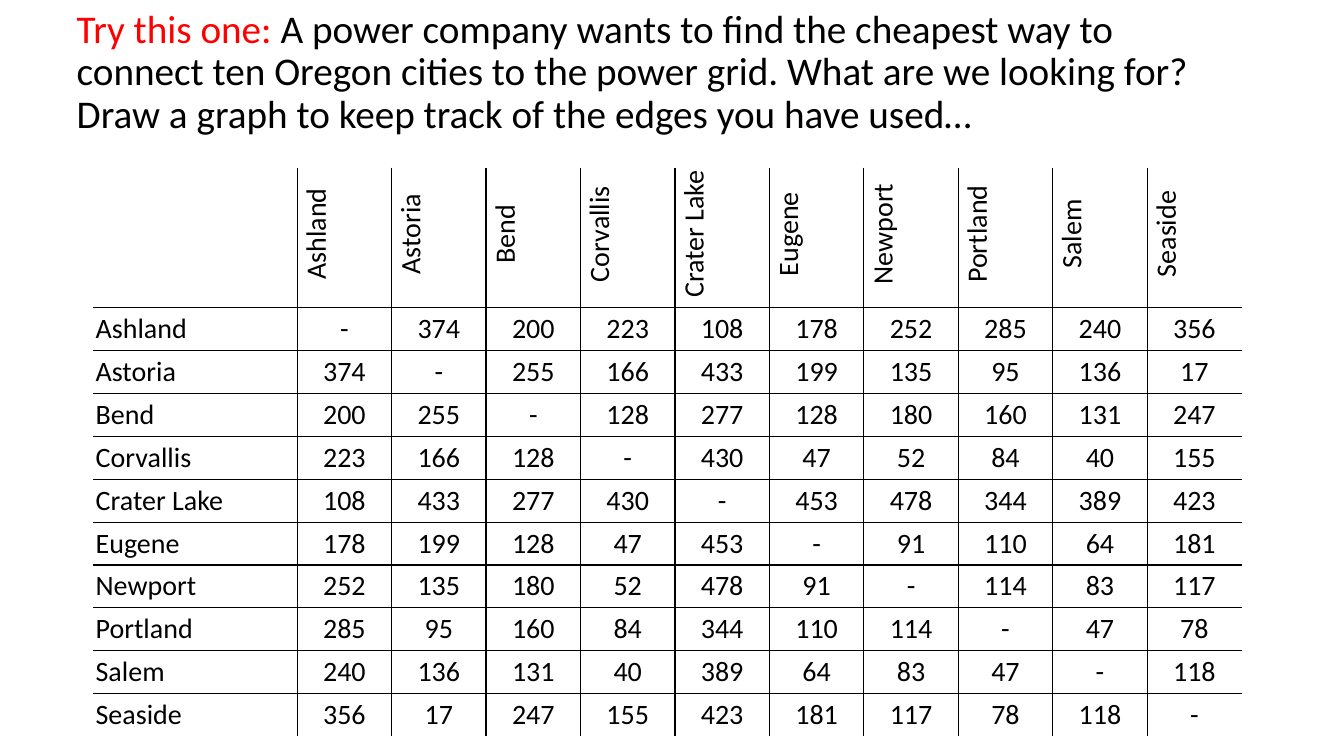
"""Build a slide with a distance table for ten Oregon cities."""
from lxml.etree import SubElement
from pptx import Presentation
from pptx.dml.color import RGBColor
from pptx.enum.text import MSO_ANCHOR, MSO_AUTO_SIZE, PP_ALIGN
from pptx.oxml.ns import qn
from pptx.util import Cm, Pt


def add_run(p, text, size, color):
    r = p.add_run()
    r.text = text
    for name, value in {"name": "Calibri", "size": Pt(size), "bold": False}.items():
        setattr(r.font, name, value)
    r.font.color.rgb = RGBColor.from_string(color)


def set_border(tcPr, side, color):
    ln = SubElement(tcPr, qn(f"a:ln{side}"), w=str(Pt(1)))
    fill = SubElement(ln, qn("a:solidFill"))
    SubElement(fill, qn("a:srgbClr"), val=color)


BLACK, WHITE, RED = "000000", "FFFFFF", "FF0000"
CITIES = ["Ashland", "Astoria", "Bend", "Corvallis", "Crater Lake",
          "Eugene", "Newport", "Portland", "Salem", "Seaside"]
DISTANCES = """
- 374 200 223 108 178 252 285 240 356
374 - 255 166 433 199 135 95 136 17
200 255 - 128 277 128 180 160 131 247
223 166 128 - 430 47 52 84 40 155
108 433 277 430 - 453 478 344 389 423
178 199 128 47 453 - 91 110 64 181
252 135 180 52 478 91 - 114 83 117
285 95 160 84 344 110 114 - 47 78
240 136 131 40 389 64 83 47 - 118
356 17 247 155 423 181 117 78 118 -
"""
rows = [["", *CITIES]]
rows += [[city, *line.split()] for city, line in zip(CITIES, DISTANCES.strip().splitlines())]
last = len(CITIES)

prs = Presentation()
prs.slide_width, prs.slide_height = Cm(33.87), Cm(19.05)
s = prs.slides.add_slide(prs.slide_layouts[5])

title = s.shapes.title
for name, value in {"left": 1.68, "top": 0, "width": 29.21, "height": 3.68}.items():
    setattr(title, name, Cm(value))
tf = title.text_frame
for name, value in {"word_wrap": True, "auto_size": MSO_AUTO_SIZE.NONE,
                    "vertical_anchor": MSO_ANCHOR.MIDDLE}.items():
    setattr(tf, name, value)
p = tf.paragraphs[0]
p.alignment, p.line_spacing = PP_ALIGN.LEFT, 0.9
add_run(p, "Try this one: ", 28, RED)
add_run(p, "A power company wants to find the cheapest way to connect ten Oregon cities "
           "to the power grid. What are we looking for? ", 28, BLACK)
p.add_line_break()
add_run(p, "Draw a graph to keep track of the edges you have used…", 28, BLACK)

table = s.shapes.add_table(last + 1, last + 1, Cm(2.36), Cm(4.24), Cm(28.93), Cm(13.97)).table
table.first_row = table.horz_banding = False
for i in range(last + 1):
    table.columns[i].width = Cm(2.38 if i else 5.13)
    table.rows[i].height = Cm(1.08 if i else 3.12)

for i, row in enumerate(rows):
    for j, text in enumerate(row):
        cell = table.cell(i, j)
        for name, value in {"margin_left": Cm(0.05), "margin_right": Cm(0.05),
                            "margin_top": Cm(0.05), "margin_bottom": Cm(0.05),
                            "vertical_anchor": MSO_ANCHOR.MIDDLE}.items():
            setattr(cell, name, value)
        tcPr = cell._tc.get_or_add_tcPr()
        if j > 0:
            set_border(tcPr, "L", BLACK)
        set_border(tcPr, "R", WHITE if j == last else BLACK)
        if i > 0:
            set_border(tcPr, "T", BLACK)
        set_border(tcPr, "B", WHITE if i == last else BLACK)
        cell.fill.background()
        p = cell.text_frame.paragraphs[0]
        p.alignment = PP_ALIGN.CENTER if j else PP_ALIGN.LEFT
        if text:
            add_run(p, text, 20, BLACK)
        if i == 0 and j > 0:
            tcPr.set("vert", "vert270")
            p._p.get_or_add_pPr().set("marL", str(Cm(0.2)))

prs.save("out.pptx")
